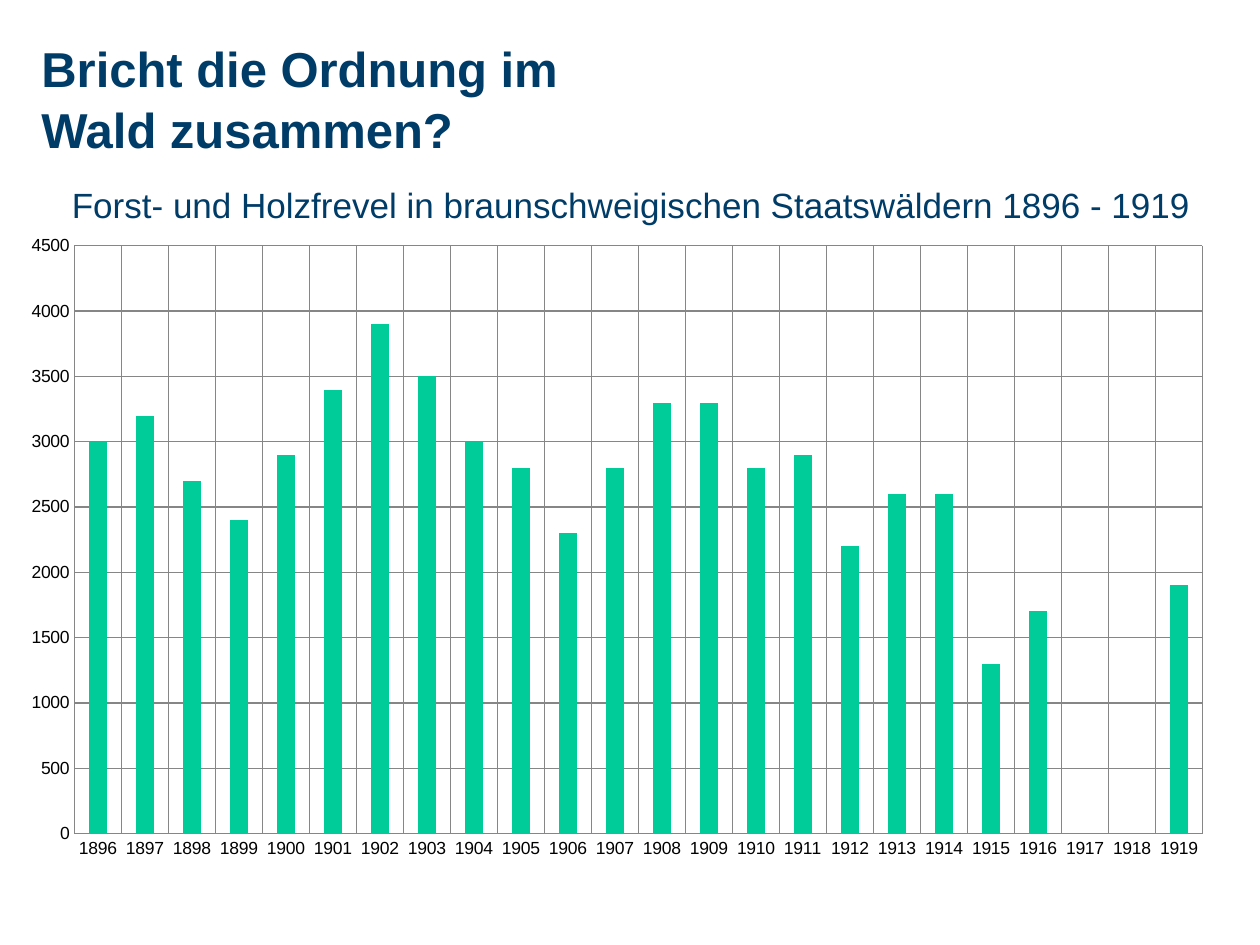
from lxml.etree import SubElement
from pptx import Presentation
from pptx.chart.data import CategoryChartData
from pptx.dml.color import RGBColor
from pptx.enum.chart import XL_CHART_TYPE, XL_TICK_MARK
from pptx.enum.text import MSO_ANCHOR, PP_ALIGN
from pptx.oxml.ns import qn
from pptx.util import Inches, Pt

FONT = "Arial"
NAVY, GREEN, GREY, BLACK = "003C68", "00CC99", "868686", "000000"

FIRST_YEAR = 1896
OFFENCES = [3000, 3200, 2700, 2400, 2900, 3400, 3900, 3500,
            3000, 2800, 2300, 2800, 3300, 3300, 2800, 2900,
            2200, 2600, 2600, 1300, 1700, None, None, 1900]
PLOT_AREA = {"x": 0.061, "y": 0.029, "w": 0.924, "h": 0.892}


def color(hex_value):
    return RGBColor.from_string(hex_value)


def format_font(font, size, hex_value, bold=False):
    font.name = FONT
    font.size = Pt(size)
    font.bold = bold
    font.color.rgb = color(hex_value)


def write_text(shape, text, size, bold=False, line_spacing=1.0):
    text_frame = shape.text_frame
    text_frame.text = text
    text_frame.word_wrap = True
    text_frame.vertical_anchor = MSO_ANCHOR.TOP
    paragraph = text_frame.paragraphs[0]
    paragraph.alignment = PP_ALIGN.LEFT
    paragraph.line_spacing = line_spacing
    format_font(paragraph.runs[0].font, size, NAVY, bold)


def add_subject(slide):
    title = slide.shapes.title
    title.left, title.top = Inches(0.47), Inches(1.41)
    title.width, title.height = Inches(9.53), Inches(0.63)
    write_text(title, "Forst- und Holzfrevel in braunschweigischen "
                      "Staatswäldern 1896 - 1919", 20)


def add_headline(slide):
    headline = slide.shapes.add_textbox(
        Inches(0.23), Inches(0.23), Inches(5.31), Inches(0.94))
    write_text(headline, "Bricht die Ordnung im Wald zusammen?", 28,
               bold=True, line_spacing=1.05)
    headline.text_frame.margin_right = Inches(0.2)


def format_axis(axis):
    axis.has_major_gridlines = True
    axis.major_tick_mark = XL_TICK_MARK.NONE
    axis.minor_tick_mark = XL_TICK_MARK.NONE
    for line in (axis.format.line, axis.major_gridlines.format.line):
        line.color.rgb = color(GREY)
        line.width = Pt(0.75)


def place_plot(chart):
    """Fix the inner plot area as shares of the chart's size."""
    plot_area = chart.plots[0]._element.getparent()
    for old_layout in plot_area.findall(qn("c:layout")):
        plot_area.remove(old_layout)
    layout = SubElement(plot_area, qn("c:layout"))
    plot_area.insert(0, layout)
    manual = SubElement(layout, qn("c:manualLayout"))
    settings = {"layoutTarget": "inner", "xMode": "edge", "yMode": "edge",
                **PLOT_AREA}
    for name, value in settings.items():
        SubElement(manual, qn(f"c:{name}")).set("val", str(value))


def add_offence_chart(slide):
    data = CategoryChartData()
    data.categories = [str(FIRST_YEAR + i) for i in range(len(OFFENCES))]
    data.add_series("Series 1", OFFENCES)
    chart = slide.shapes.add_chart(
        XL_CHART_TYPE.COLUMN_CLUSTERED, Inches(0), Inches(1.8),
        Inches(9.69), Inches(5.23), data).chart
    chart.has_legend = False
    chart.has_title = False
    format_font(chart.font, 10, BLACK)

    # Columns
    plot = chart.plots[0]
    plot.vary_by_categories = False
    plot.gap_width = 150
    fill = plot.series[0].format.fill
    fill.solid()
    fill.fore_color.rgb = color(GREEN)

    # Axes
    format_axis(chart.category_axis)
    format_axis(chart.value_axis)
    chart.value_axis.minimum_scale = 0
    chart.value_axis.maximum_scale = 4500
    chart.value_axis.major_unit = 500
    place_plot(chart)


def main():
    presentation = Presentation()
    presentation.slide_width = Inches(10)
    presentation.slide_height = Inches(7.5)
    slide = presentation.slides.add_slide(presentation.slide_layouts[5])
    add_subject(slide)
    add_offence_chart(slide)
    add_headline(slide)
    presentation.save("out.pptx")


if __name__ == "__main__":
    main()
